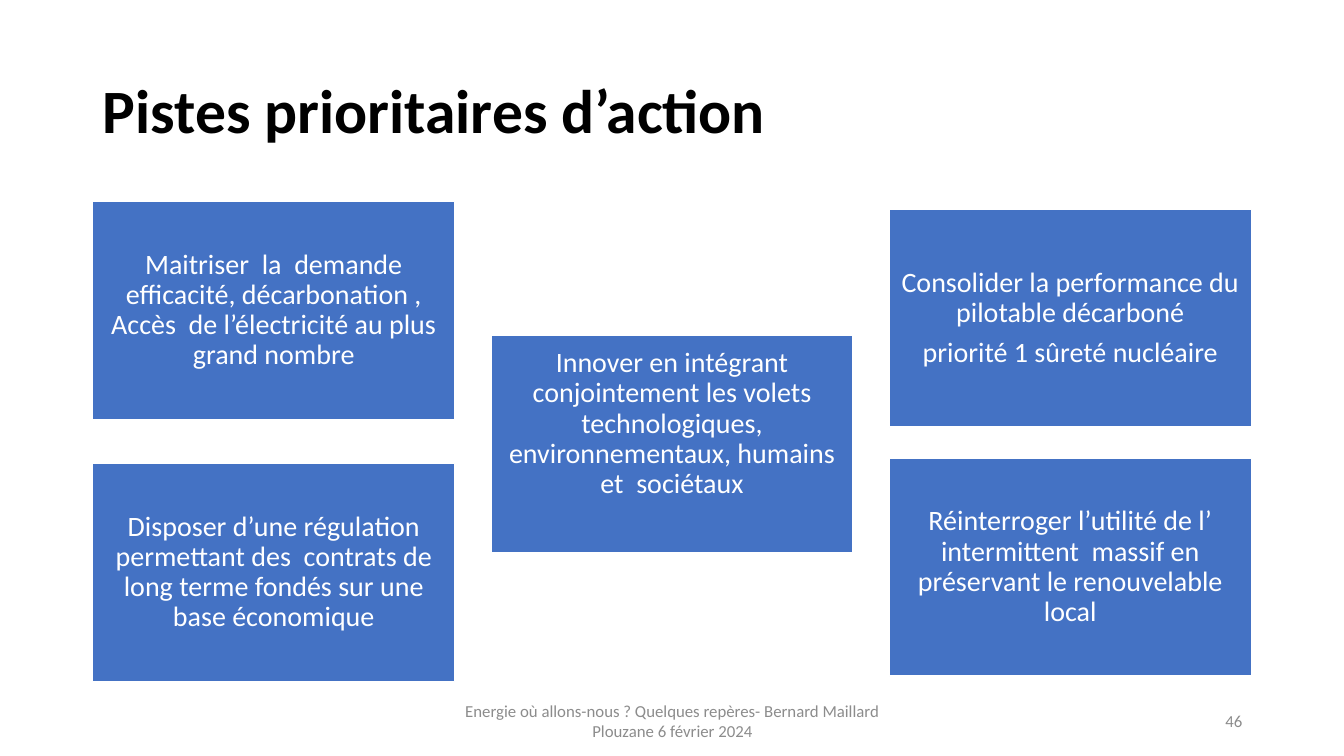
import pptx
import pptx.util
import pptx.dml.color
import pptx.enum.shapes
import pptx.enum.text

Inches = pptx.util.Inches
Pt = pptx.util.Pt
RGBColor = pptx.dml.color.RGBColor
Align = pptx.enum.text.PP_ALIGN

BLUE = RGBColor(0x44, 0x72, 0xC4)
WHITE = RGBColor(0xFF, 0xFF, 0xFF)
BLACK = RGBColor(0, 0, 0)
GREY = RGBColor(0x8C, 0x8C, 0x8C)

SLIDE_WIDTH, SLIDE_HEIGHT = 13.33, 7.5
LEFT, TOP = 0.92, 2
COLUMN, ROW = 3.95, 2.6
CARD_WIDTH, CARD_HEIGHT = 3.59, 2.16
INSET = 0.08
BLANK_LINE = 0.4

CARDS = [
    (0, 1, 0, ["Disposer d’une régulation permettant des  contrats de long terme "
               "fondés sur une base économique"]),
    (0, 0, 0, ["Maitriser  la  demande efficacité, décarbonation , "
               "Accès  de l’électricité au plus grand nombre"]),
    (2, 0.98, 0, ["Réinterroger l’utilité de l’ intermittent  massif en préservant "
                  "le renouvelable local"]),
    (1, 0.51, BLANK_LINE, ["Innover en intégrant conjointement les volets technologiques, "
                           "environnementaux, humains et  sociétaux"]),
    (2, 0.03, 0, ["Consolider la performance du pilotable décarboné",
                  "priorité 1 sûreté nucléaire"]),
]


class ActionSlide:
    """Holds the style and the current slide, and adds each kind of element."""

    font = "Calibri"

    def __init__(self, presentation):
        self.slide = presentation.slides.add_slide(presentation.slide_layouts[5])

    def fill_text(self, frame, texts, size, color, alignment, bold=False, spacing=1.0, after=0):
        frame.word_wrap = True
        frame.auto_size = pptx.enum.text.MSO_AUTO_SIZE.NONE
        frame.vertical_anchor = pptx.enum.text.MSO_ANCHOR.MIDDLE
        for index, text in enumerate(texts):
            paragraph = frame.add_paragraph() if index else frame.paragraphs[0]
            paragraph.alignment = alignment
            paragraph.line_spacing = spacing
            paragraph.space_before = Pt(0)
            paragraph.space_after = Pt(after)
            run = paragraph.add_run()
            run.text = text
            run.font.name = self.font
            run.font.size = Pt(size)
            run.font.bold = bold
            run.font.color.rgb = color

    def title(self, text):
        shape = self.slide.shapes.title
        shape.left, shape.top = Inches(LEFT), Inches(0.4)
        shape.width, shape.height = Inches(11.5), Inches(1.45)
        self.fill_text(shape.text_frame, [text], 44, BLACK, Align.LEFT, bold=True, spacing=0.9)

    def card(self, column, row, lift, texts):
        shape = self.slide.shapes.add_shape(
            pptx.enum.shapes.MSO_SHAPE.RECTANGLE,
            Inches(LEFT + column * COLUMN), Inches(TOP + row * ROW),
            Inches(CARD_WIDTH), Inches(CARD_HEIGHT))
        shape.shadow.inherit = False
        shape.fill.solid()
        shape.fill.fore_color.rgb = BLUE
        shape.line.color.rgb = WHITE
        shape.line.width = Pt(1)
        frame = shape.text_frame
        frame.margin_left = frame.margin_right = frame.margin_top = Inches(INSET)
        frame.margin_bottom = Inches(INSET + lift)
        self.fill_text(frame, texts, 20, WHITE, Align.CENTER, spacing=0.9, after=7)

    def footer(self, left, width, text, alignment):
        shape = self.slide.shapes.add_textbox(
            Inches(left), Inches(6.95), Inches(width), Inches(0.4))
        self.fill_text(shape.text_frame, [text], 12, GREY, alignment)


def main():
    presentation = pptx.Presentation()
    presentation.slide_width = Inches(SLIDE_WIDTH)
    presentation.slide_height = Inches(SLIDE_HEIGHT)
    page = ActionSlide(presentation)
    page.title("Pistes prioritaires d’action")
    for column, row, lift, texts in CARDS:
        page.card(column, row, lift, texts)
    page.footer(4.42, 4.5, "Energie où allons-nous ? Quelques repères- Bernard Maillard "
                "Plouzane 6 février 2024", Align.CENTER)
    page.footer(9.42, 3, "46", Align.RIGHT)
    presentation.save("out.pptx")


if __name__ == "__main__":
    main()
